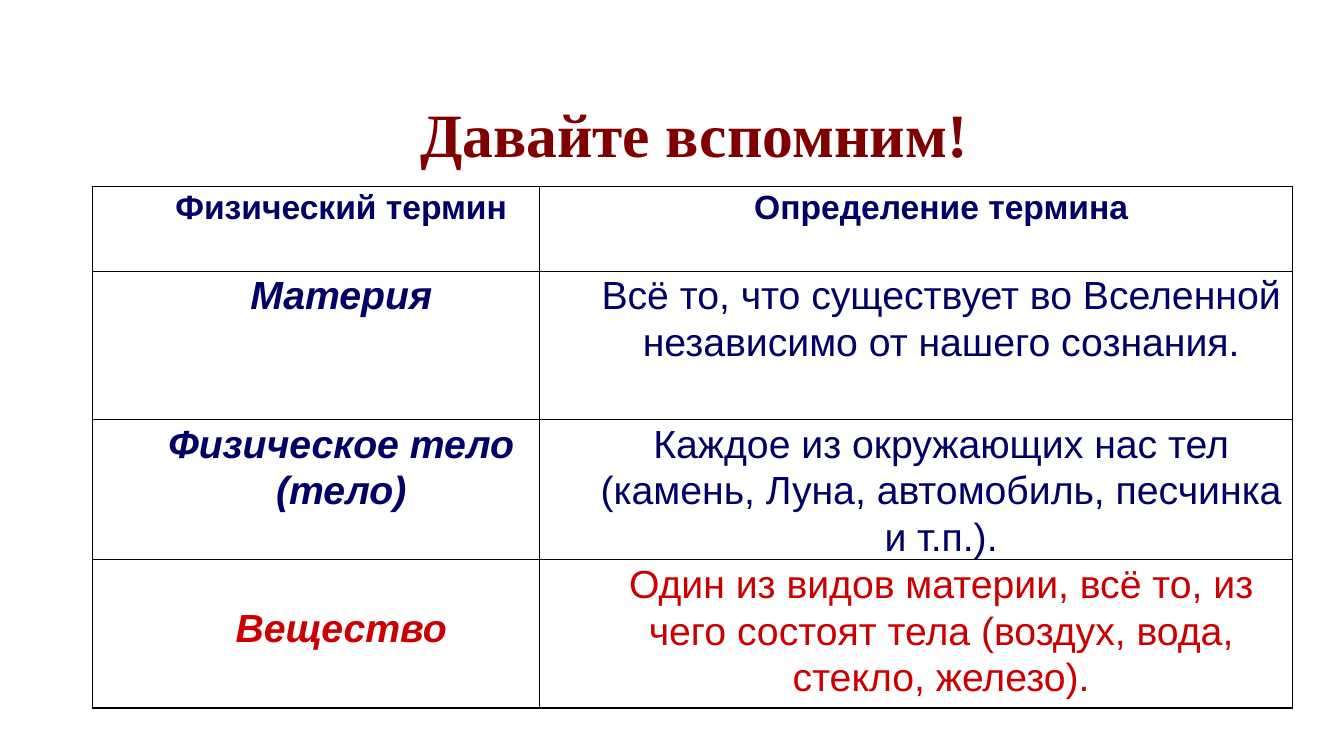
import dataclasses

import lxml.etree
import pptx
import pptx.dml.color
import pptx.enum.text
import pptx.oxml.ns
import pptx.table
import pptx.util

RGB = pptx.dml.color.RGBColor
MAROON = RGB(0x80, 0x00, 0x00)
NAVY = RGB(0x00, 0x00, 0x66)
RED = RGB(0xCC, 0x00, 0x00)
BLACK = RGB(0x00, 0x00, 0x00)

WIDE = pptx.util.Inches(13.33)
HIGH = pptx.util.Inches(7.5)
COLS = (0.3323, 0.5604)
SIDE = pptx.util.Inches(0.07)
INDENT = pptx.util.Inches(0.5)
CENTER = pptx.enum.text.PP_ALIGN.CENTER


@dataclasses.dataclass(frozen=True)
class Style:
    size: float
    color: RGB
    bold: bool = False
    slant: bool = False
    font: str = "Arial"


@dataclasses.dataclass(frozen=True)
class Entry:
    term: str
    meaning: str
    share: float
    left: Style
    right: Style
    drop: float = 0


TITLE = Style(44, MAROON, bold=True, font="Times New Roman")
HEAD = Style(24, NAVY, bold=True)
TERM = Style(28, NAVY, bold=True, slant=True)
PLAIN = Style(28, NAVY)

ROWS = (
    Entry("Физический термин", "Определение термина", 0.112, HEAD, HEAD),
    Entry("Материя",
          "Всё то, что существует во Вселенной независимо от нашего сознания.",
          0.196, TERM, PLAIN),
    Entry("Физическое тело (тело)",
          "Каждое из окружающих нас тел (камень, Луна, автомобиль, песчинка и т.п.).",
          0.13, TERM, PLAIN),
    Entry("Вещество",
          "Один из видов материи, всё то, из чего состоят тела (воздух, вода, стекло, железо).",
          0.196, dataclasses.replace(TERM, color=RED),
          dataclasses.replace(PLAIN, color=RED), drop=0.44),
)


def across(share: float) -> int:
    return round(WIDE * share)


def down(share: float) -> int:
    return round(HIGH * share)


def write(frame, text: str, style: Style, pitch: float):
    para = frame.paragraphs[0]
    para.alignment = CENTER
    para.line_spacing = pitch
    run = para.add_run()
    run.text = text
    font = run.font
    font.name = style.font
    font.size = pptx.util.Pt(style.size)
    font.bold = style.bold
    font.italic = style.slant
    font.color.rgb = style.color
    return para


def frame_cell(cell: pptx.table._Cell) -> None:
    props = cell._tc.get_or_add_tcPr()
    name = pptx.oxml.ns.qn
    for place, side in enumerate(("a:lnL", "a:lnR", "a:lnT", "a:lnB")):
        line = lxml.etree.Element(name(side), w=str(pptx.util.Pt(1)))
        fill = lxml.etree.SubElement(line, name("a:solidFill"))
        lxml.etree.SubElement(fill, name("a:srgbClr"), val=str(BLACK))
        props.insert(place, line)


def fill_cell(cell: pptx.table._Cell, text: str, style: Style, drop: float = 0) -> None:
    cell.fill.background()
    cell.margin_left = cell.margin_right = SIDE
    cell.margin_top = pptx.util.Inches(drop)
    cell.margin_bottom = 0
    cell.vertical_anchor = pptx.enum.text.MSO_ANCHOR.TOP
    para = write(cell.text_frame, text, style, 1.07)
    props = para._p.get_or_add_pPr()
    props.set("marL", str(INDENT))
    props.set("indent", "0")
    frame_cell(cell)


def add_title(slide) -> None:
    title = slide.shapes.title
    title.left, title.top = across(0.085), down(0.085)
    title.width, title.height = across(0.863), down(0.193)
    frame = title.text_frame
    frame.word_wrap = True
    frame.auto_size = pptx.enum.text.MSO_AUTO_SIZE.NONE
    frame.vertical_anchor = pptx.enum.text.MSO_ANCHOR.MIDDLE
    write(frame, "Давайте вспомним!", TITLE, 0.9)


def add_terms(slide) -> None:
    total = sum(row.share for row in ROWS)
    table = slide.shapes.add_table(
        len(ROWS), len(COLS), across(0.069), down(0.247),
        across(sum(COLS)), down(total)).table
    table.first_row = False
    table.horz_banding = False
    for col, share in zip(table.columns, COLS):
        col.width = across(share)
    for index, entry in enumerate(ROWS):
        table.rows[index].height = down(entry.share)
        fill_cell(table.cell(index, 0), entry.term, entry.left, entry.drop)
        fill_cell(table.cell(index, 1), entry.meaning, entry.right)


def main() -> None:
    deck = pptx.Presentation()
    deck.slide_width, deck.slide_height = WIDE, HIGH
    slide = deck.slides.add_slide(deck.slide_layouts[5])
    add_title(slide)
    add_terms(slide)
    deck.save("out.pptx")


if __name__ == "__main__":
    main()
